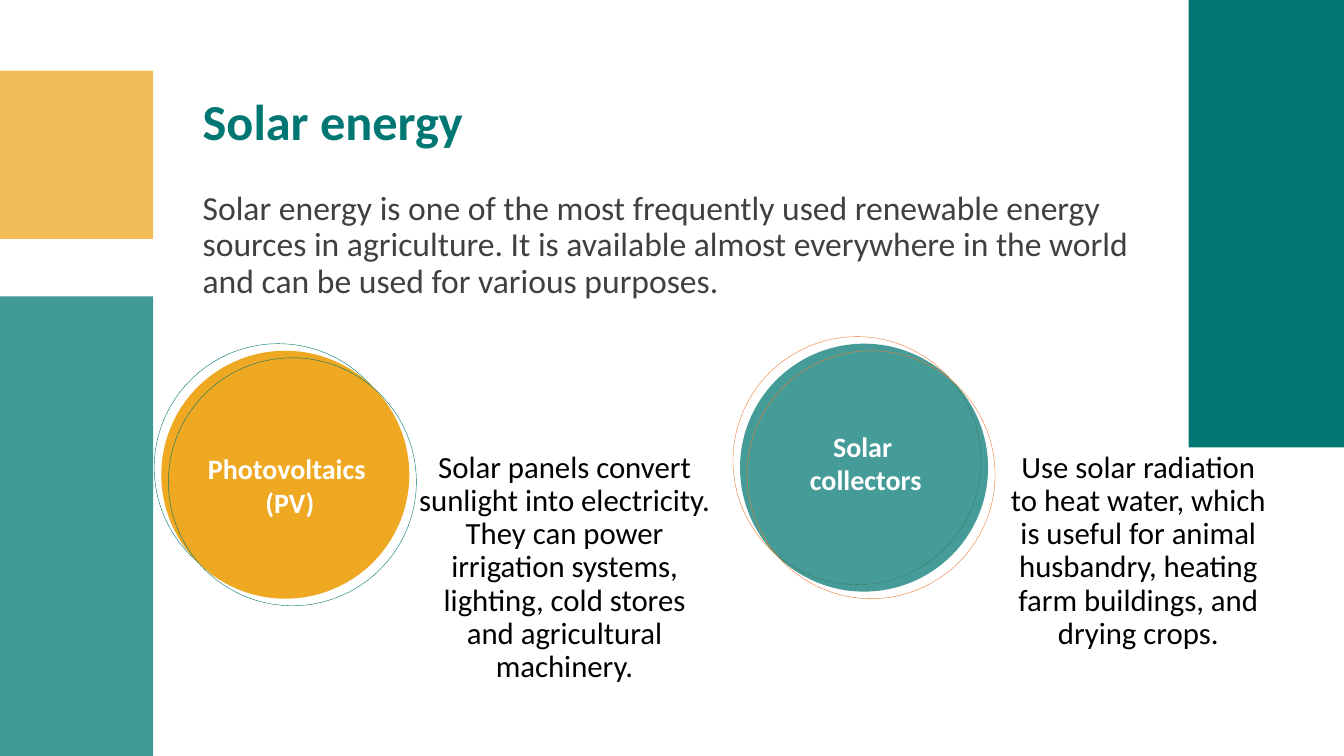
import pptx
import pptx.dml.color
import pptx.enum.shapes
import pptx.enum.text
import pptx.oxml
import pptx.oxml.ns
import pptx.util

EMU_PER_PX = 9144  # 100 px to the inch
FONT = "Calibri"
TEAL, AMBER, ORANGE = "007772", "EEA821", "ED7D31"
WHITE, BLACK, GREY = "FFFFFF", "000000", "404040"
RECTANGLE = pptx.enum.shapes.MSO_SHAPE.RECTANGLE
OVAL = pptx.enum.shapes.MSO_SHAPE.OVAL
LEFT = pptx.enum.text.PP_ALIGN.LEFT
CENTER = pptx.enum.text.PP_ALIGN.CENTER
DISC_SIZE = 246
RING_OFFSET = 7


def px(length):
    return pptx.util.Emu(length * EMU_PER_PX)


def paint(color_format, color):
    color_format.rgb = pptx.dml.color.RGBColor.from_string(color)


def add_filled(page, kind, bounds, color, opacity=100):
    shape = page.shapes.add_shape(kind, *map(px, bounds))
    shape.shadow.inherit = False
    shape.line.fill.background()
    shape.fill.solid()
    paint(shape.fill.fore_color, color)
    if opacity < 100:
        rgb = shape.fill._xPr.find(".//" + pptx.oxml.ns.qn("a:srgbClr"))
        alpha = pptx.oxml.parse_xml(f'<a:alpha {pptx.oxml.ns.nsdecls("a")} val="{opacity * 1000}"/>')
        rgb.append(alpha)


def add_ring(page, left, top, color):
    ring = page.shapes.add_shape(OVAL, *map(px, (left, top, DISC_SIZE, DISC_SIZE)))
    ring.shadow.inherit = False
    ring.fill.background()
    paint(ring.line.color, color)
    ring.line.width = pptx.util.Pt(0.28)


def add_disc(page, left, top, color, opacity, ring_color):
    """Draw a filled disc between two thin rings shifted up-left and down-right."""
    add_ring(page, left - RING_OFFSET, top - RING_OFFSET, ring_color)
    add_filled(page, OVAL, (left, top, DISC_SIZE, DISC_SIZE), color, opacity)
    add_ring(page, left + RING_OFFSET, top + RING_OFFSET, ring_color)


def write(box, lines, size, color, bold=False, align=CENTER, spacing=0.9):
    frame = box.text_frame
    frame.word_wrap = True
    frame.auto_size = pptx.enum.text.MSO_AUTO_SIZE.NONE
    frame.vertical_anchor = pptx.enum.text.MSO_ANCHOR.TOP
    for index, line in enumerate(lines):
        para = frame.add_paragraph() if index else frame.paragraphs[0]
        para.alignment = align
        para.line_spacing = spacing
        para.space_before = pptx.util.Pt(0)
        span = para.add_run()
        span.text = line
        span.font.name = FONT
        span.font.size = pptx.util.Pt(size)
        span.font.bold = bold
        paint(span.font.color, color)


def add_text(page, bounds, lines, size, color, **style):
    box = page.shapes.add_textbox(*map(px, bounds))
    write(box, lines, size, color, **style)


def fill_placeholder(holder, bounds, text, size, color, bold=False):
    holder.left, holder.top, holder.width, holder.height = map(px, bounds)
    properties = holder.text_frame.paragraphs[0]._p.get_or_add_pPr()
    properties.set("marL", "0")
    properties.set("indent", "0")
    properties.append(pptx.oxml.parse_xml(f'<a:buNone {pptx.oxml.ns.nsdecls("a")}/>'))
    write(holder, [text], size, color, bold=bold, align=LEFT)


def main():
    deck = pptx.Presentation()
    deck.slide_width, deck.slide_height = px(1333), px(750)
    page = deck.slides.add_slide(deck.slide_layouts[1])

    add_filled(page, RECTANGLE, (-4, 294, 156, 456), TEAL, 75)
    add_filled(page, RECTANGLE, (-4, 70, 156, 167), AMBER, 75)
    add_filled(page, RECTANGLE, (1179, 0, 156, 444), TEAL)

    fill_placeholder(page.shapes.title, (191, 91, 710, 46), "Solar energy", 36, TEAL, bold=True)
    fill_placeholder(
        page.placeholders[1], (191, 185, 965, 198),
        "Solar energy is one of the most frequently used renewable energy sources in agriculture. "
        "It is available almost everywhere in the world and can be used for various purposes.",
        24, GREY)

    add_disc(page, 160, 348, AMBER, 100, TEAL)
    add_text(page, (160, 443, 255, 77), ["Photovoltaics ", "(PV)"], 20, WHITE, bold=True, spacing=1.0)
    add_text(
        page, (405, 443, 310, 246),
        ["Solar panels convert sunlight into electricity. They can power irrigation systems, "
         "lighting, cold stores and agricultural machinery."], 22, BLACK)

    add_disc(page, 734, 341, TEAL, 73, ORANGE)
    add_text(page, (728, 421, 255, 77), ["Solar", " collectors"], 20, WHITE, bold=True, spacing=1.0)
    add_text(
        page, (990, 443, 278, 200),
        ["Use solar radiation to heat water, which is useful for animal husbandry, "
         "heating farm buildings, and drying crops."], 22, BLACK)

    deck.save("out.pptx")


if __name__ == "__main__":
    main()
